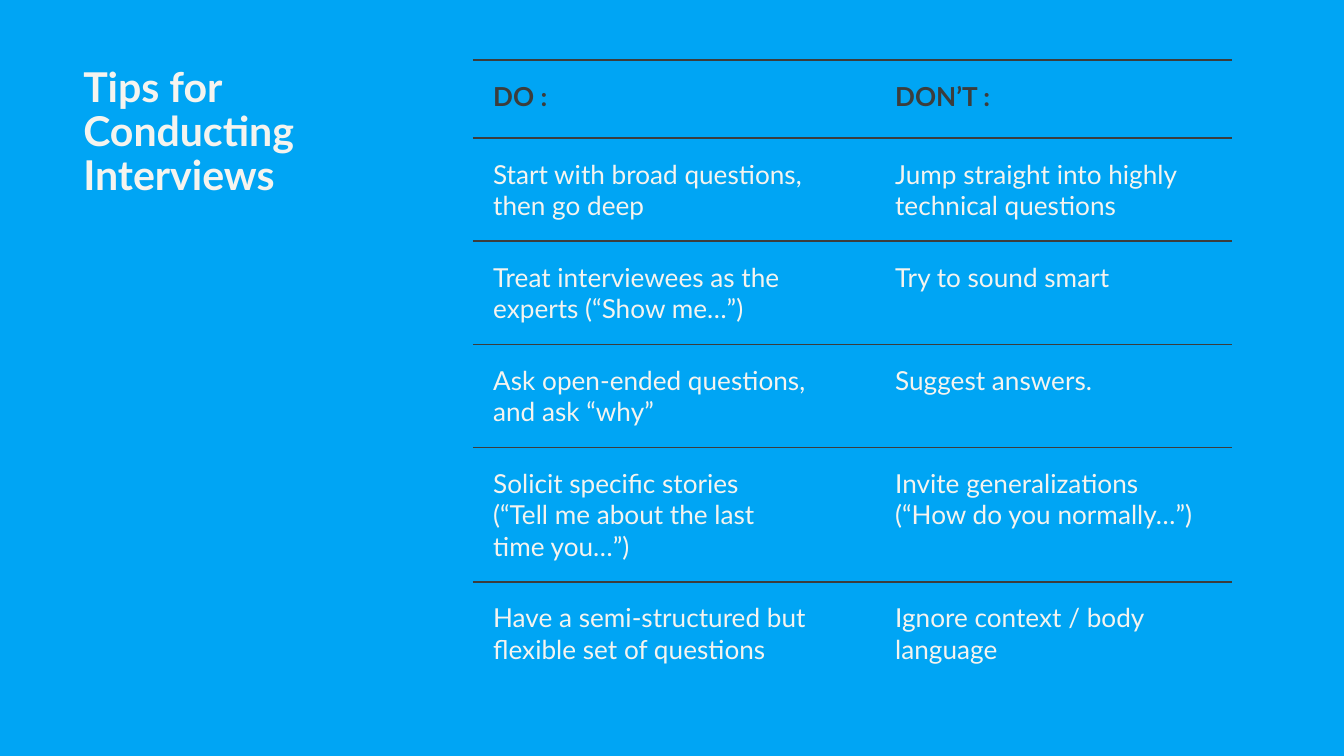
from lxml.etree import SubElement
from pptx import Presentation
from pptx.dml.color import RGBColor
from pptx.enum.text import MSO_ANCHOR
from pptx.oxml.ns import qn
from pptx.util import Pt

NO_STYLE_NO_GRID = "{2D5ABB26-0587-4C30-8999-92F81FD0307C}"
SKY, CREAM, CHARCOAL = "00A5F4", "F5F4EF", "3C3D3C"

TIPS = [
    ("DO :", "DON’T :"),
    ("Start with broad questions, then go deep",
     "Jump straight into highly technical questions"),
    ("Treat interviewees as the experts (“Show me…”)", "Try to sound smart"),
    ("Ask open-ended questions, and ask “why”", "Suggest answers."),
    ("Solicit specific stories\n(“Tell me about the last time you…”)",
     "Invite generalizations\n(“How do you normally…”)"),
    ("Have a semi-structured but flexible set of questions",
     "Ignore context / body language"),
]
COLUMN_WIDTHS = [191.4, 24, 191.4]
ROW_HEIGHTS = [41.8, 55.2, 55.2, 55.2, 72, 55.2]


def rgb(hex_color):
    return RGBColor.from_string(hex_color)


class TipsSlide:
    font_name = "Lato"
    cell_margin = 10.8

    def __init__(self, deck):
        self.slide = deck.slides.add_slide(deck.slide_layouts[6])
        fill = self.slide.background.fill
        fill.solid()
        fill.fore_color.rgb = rgb(SKY)

    def style_text(self, frame, size, color, bold):
        for paragraph in frame.paragraphs:
            for run in paragraph.runs:
                run.font.name = self.font_name
                run.font.size = Pt(size)
                run.font.bold = bold
                run.font.color.rgb = rgb(color)

    def title(self, text, left, top, width, height):
        frame = self.slide.shapes.add_textbox(
            Pt(left), Pt(top), Pt(width), Pt(height)).text_frame
        frame.word_wrap = True
        frame.vertical_anchor = MSO_ANCHOR.TOP
        frame.text = text
        frame.paragraphs[0].line_spacing = 0.9
        self.style_text(frame, 22, CREAM, True)

    def rule(self, cell, side):
        """Draw a cell border; side is the XML tag, such as a:lnT."""
        line = SubElement(cell._tc.get_or_add_tcPr(), qn(side), w=str(Pt(1)))
        fill = SubElement(line, qn("a:solidFill"))
        SubElement(fill, qn("a:srgbClr"), val=CHARCOAL)

    def cell_text(self, cell, text, is_header):
        cell.margin_left = cell.margin_right = Pt(self.cell_margin)
        cell.margin_top = cell.margin_bottom = Pt(self.cell_margin)
        cell.text_frame.text = text
        self.style_text(cell.text_frame, 14,
                        CHARCOAL if is_header else CREAM, is_header)

    def table(self, pairs, left, top):
        table = self.slide.shapes.add_table(
            len(pairs), len(COLUMN_WIDTHS), Pt(left), Pt(top),
            Pt(sum(COLUMN_WIDTHS)), Pt(sum(ROW_HEIGHTS))).table
        table.first_row = table.horz_banding = False
        table._tbl.tblPr.find(qn("a:tableStyleId")).text = NO_STYLE_NO_GRID
        for column, width in zip(table.columns, COLUMN_WIDTHS):
            column.width = Pt(width)
        for index, (row, (do, dont)) in enumerate(zip(table.rows, pairs)):
            row.height = Pt(ROW_HEIGHTS[index])
            do_cell, gap_cell, dont_cell = row.cells
            for cell in (do_cell, gap_cell, dont_cell):
                self.rule(cell, "a:lnT")
                if index < len(pairs) - 1:
                    self.rule(cell, "a:lnB")
                cell.fill.background()
            self.cell_text(do_cell, do, index == 0)
            self.cell_text(dont_cell, dont, index == 0)


def main():
    deck = Presentation()
    deck.slide_width, deck.slide_height = Pt(720), Pt(405)
    page = TipsSlide(deck)
    page.title("Tips for Conducting Interviews", 37.6, 32.2, 191.4, 29.5)
    page.table(TIPS, 253.4, 32.2)
    deck.save("out.pptx")


if __name__ == "__main__":
    main()
